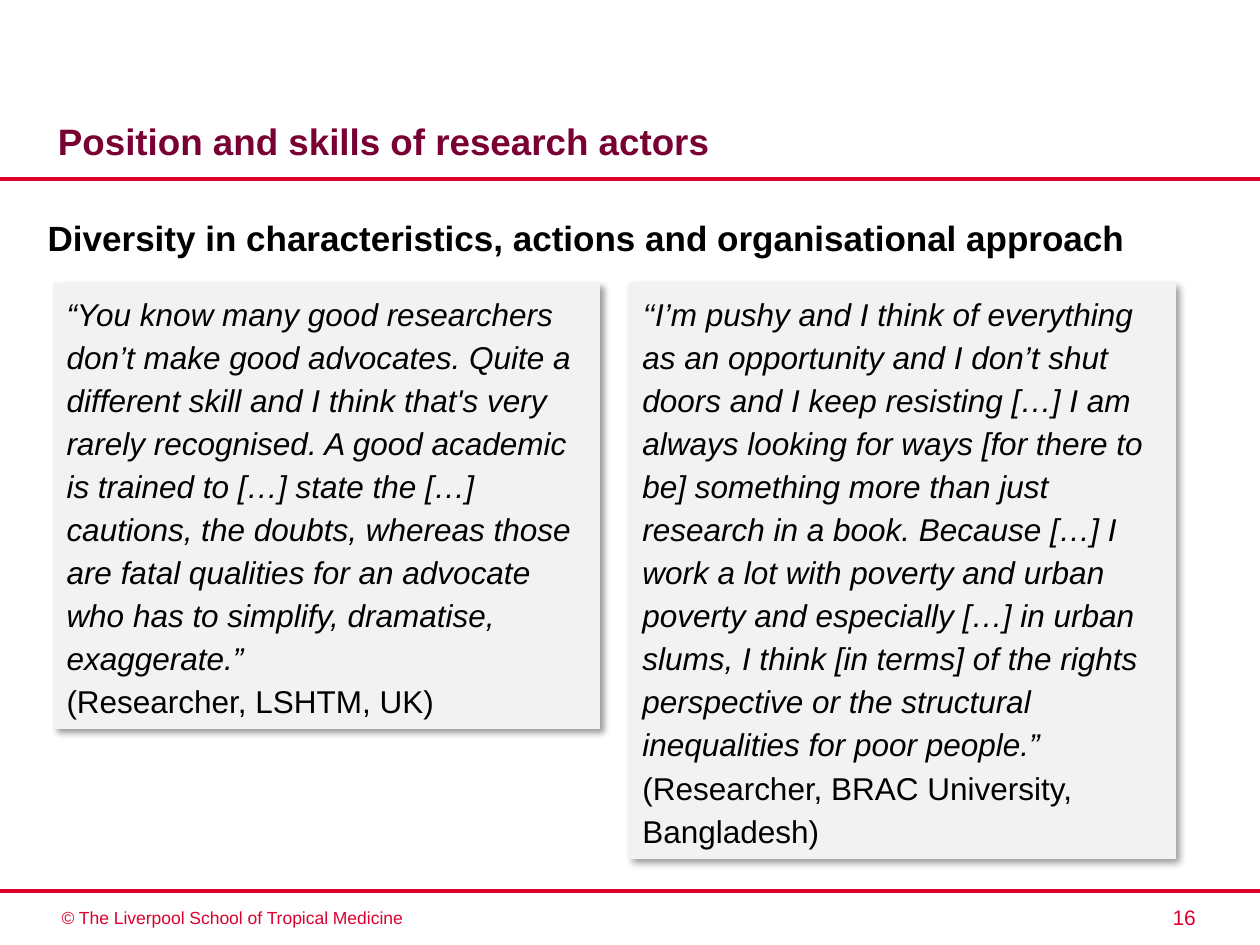
import pptx
import pptx.dml.color
import pptx.enum.shapes
import pptx.enum.text
import pptx.util
from lxml import etree
from pptx.oxml.ns import qn
from pptx.util import Inches

CRIMSON, MAROON, BLACK, PALE = "DC002E", "790033", "000000", "F2F2F2"
ALIGN = pptx.enum.text.PP_ALIGN
ANCHOR = pptx.enum.text.MSO_ANCHOR
QUOTES = [
    (0.43, 3.53,
     "“You know many good researchers don’t make good advocates. Quite a different skill "
     "and I think that's very rarely recognised. A good academic is trained to […] state "
     "the […] cautions, the doubts, whereas those are fatal qualities for an advocate who "
     "has to simplify, dramatise, exaggerate.”",
     "(Researcher, LSHTM, UK)"),
    (5, 4.56,
     "‘‘I’m pushy and I think of everything as an opportunity and I don’t shut doors and "
     "I keep resisting […] I am always looking for ways [for there to be] something more "
     "than just research in a book. Because […] I work a lot with poverty and urban "
     "poverty and especially […] in urban slums, I think [in terms] of the rights "
     "perspective or the structural inequalities for poor people.”",
     "(Researcher, BRAC University, Bangladesh)"),
]


def color(value):
    """Turn a hex string into a colour."""
    return pptx.dml.color.RGBColor.from_string(value)


class SlideBuilder:
    """Hold the style and the current slide."""

    font_name = "Arial"
    line_spacing = 1.14

    def __init__(self, deck):
        """Add a title-only slide to the deck."""
        self.slide = deck.slides.add_slide(deck.slide_layouts[5])

    def set_text(self, para, text, size, ink, bold=False, italic=False, align=ALIGN.LEFT):
        """Fill a paragraph and format its run."""
        para.text = text
        para.alignment = align
        font = para.runs[0].font
        font.name, font.size = self.font_name, pptx.util.Pt(size)
        font.bold, font.italic = bold, italic
        font.color.rgb = color(ink)

    def title(self, text, left, top, width, height):
        """Place and format the title placeholder."""
        title = self.slide.shapes.title
        title.left, title.top = Inches(left), Inches(top)
        title.width, title.height = Inches(width), Inches(height)
        frame = title.text_frame
        frame.word_wrap = True
        frame.auto_size = pptx.enum.text.MSO_AUTO_SIZE.NONE
        frame.vertical_anchor = ANCHOR.BOTTOM
        self.set_text(frame.paragraphs[0], text, 21, MAROON, bold=True)

    def label(self, text, left, top, width, height, size, ink, **style):
        """Add a one-paragraph text box."""
        box = self.slide.shapes.add_textbox(
            Inches(left), Inches(top), Inches(width), Inches(height))
        box.text_frame.word_wrap = True
        para = box.text_frame.paragraphs[0]
        self.set_text(para, text, size, ink, **style)
        return para

    def rule(self, top):
        """Draw a horizontal line across the slide."""
        line = self.slide.shapes.add_connector(
            pptx.enum.shapes.MSO_CONNECTOR.STRAIGHT,
            Inches(0), Inches(top), Inches(10), Inches(top))
        line.line.color.rgb = color(CRIMSON)
        line.line.width = pptx.util.Pt(2.25)
        etree.SubElement(line._element.spPr, qn("a:effectLst"))

    def quote(self, left, height, words, speaker):
        """Add a shadowed card with a quotation and its speaker."""
        card = self.slide.shapes.add_shape(
            pptx.enum.shapes.MSO_SHAPE.RECTANGLE,
            Inches(left), Inches(2.25), Inches(4.33), Inches(height))
        card.fill.solid()
        card.fill.fore_color.rgb = color(PALE)
        card.line.color.rgb = color(PALE)
        card.line.width = pptx.util.Pt(0.75)
        self.cast_shadow(card)
        frame = card.text_frame
        frame.word_wrap = True
        frame.vertical_anchor = ANCHOR.TOP
        self.set_text(frame.paragraphs[0], words, 18, BLACK, italic=True)
        self.set_text(frame.add_paragraph(), speaker, 18, BLACK)
        for para in frame.paragraphs:
            para.line_spacing = self.line_spacing

    def cast_shadow(self, shape):
        """Give a shape a soft shadow to the lower right."""
        shape.shadow.inherit = False
        effects = shape._element.spPr.find(qn("a:effectLst"))
        shadow = etree.SubElement(
            effects, qn("a:outerShdw"), blurRad=str(pptx.util.Pt(4)),
            dist=str(pptx.util.Pt(3)), dir="2700000", algn="tl", rotWithShape="0")
        ink = etree.SubElement(shadow, qn("a:srgbClr"), val=BLACK)
        etree.SubElement(ink, qn("a:alpha"), val="40000")


def main():
    """Build the slide and save it."""
    deck = pptx.Presentation()
    deck.slide_width, deck.slide_height = Inches(10), Inches(7.5)
    builder = SlideBuilder(deck)
    builder.label("16", 7.76, 7.13, 1.83, 0.3, 12, CRIMSON, align=ALIGN.RIGHT)
    builder.label("© The Liverpool School of Tropical Medicine",
                  0.39, 7.15, 3.95, 0.27, 10, CRIMSON)
    for top in (1.42, 7.07):
        builder.rule(top)
    builder.title("Position and skills of research actors", 0.36, 0.67, 7.08, 0.67)
    heading = builder.label(
        "Diversity in characteristics, actions and organisational approach",
        0.28, 1.62, 9.45, 0.5, 20, BLACK, bold=True)
    heading.line_spacing = builder.line_spacing
    for left, height, words, speaker in QUOTES:
        builder.quote(left, height, words, speaker)
    deck.save("out.pptx")


if __name__ == "__main__":
    main()
